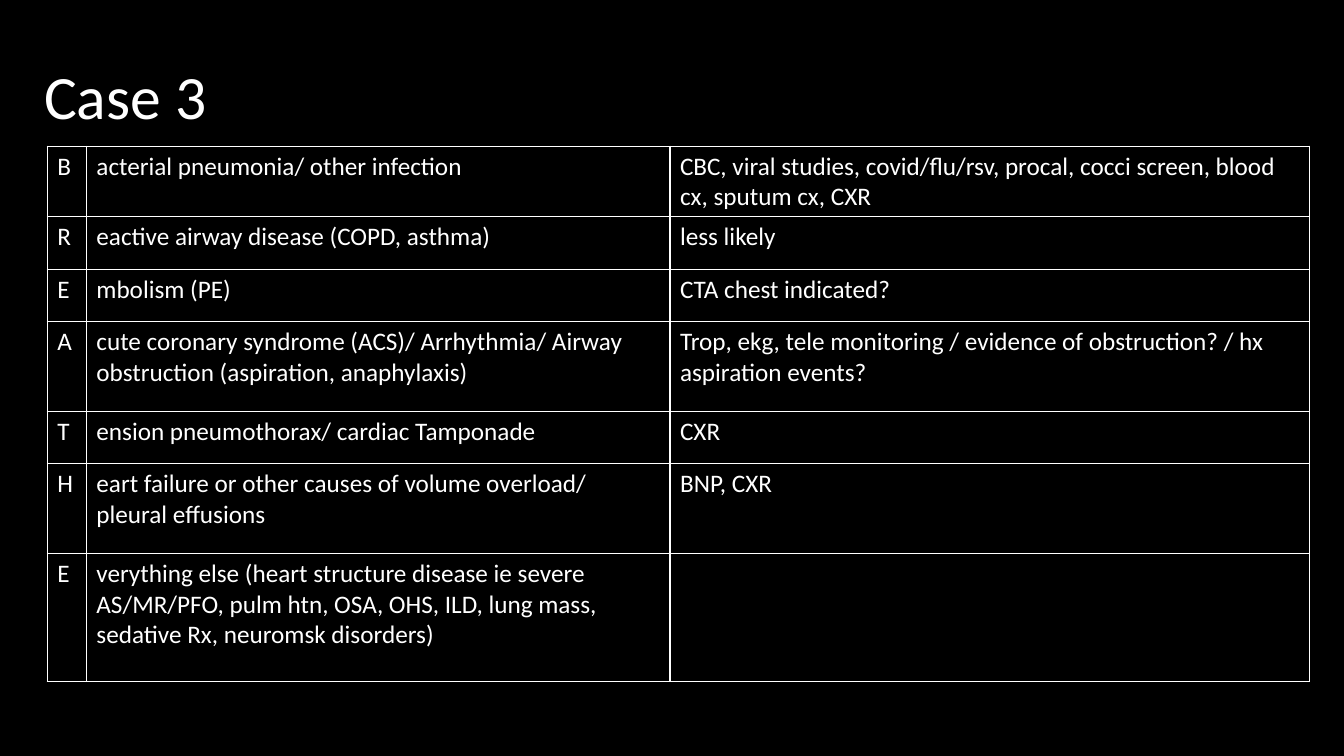
import pptx
import pptx.util
import pptx.dml.color
import pptx.enum.text
import pptx.oxml
import pptx.oxml.ns
from lxml import etree

Pt = pptx.util.Pt
FONT = "Calibri"
COLORS = {"back": "000000", "text": "FFFFFF", "line": "FFFFFF"}
TITLE = "Case 3"
ONE, TWO, THREE = 37.5, 64, 91.5  # row heights by lines of text
ROWS = [
    (ONE, "B", "acterial pneumonia/ other infection",
     "CBC, viral studies, covid/flu/rsv, procal, cocci screen, blood cx, sputum cx, CXR"),
    (ONE, "R", "eactive airway disease (COPD, asthma)", "less likely"),
    (ONE, "E", "mbolism (PE)", "CTA chest indicated?"),
    (TWO, "A", "cute coronary syndrome (ACS)/ Arrhythmia/ Airway obstruction (aspiration, anaphylaxis)",
     "Trop, ekg, tele monitoring / evidence of obstruction? / hx aspiration events?"),
    (ONE, "T", "ension pneumothorax/ cardiac Tamponade", "CXR"),
    (TWO, "H", "eart failure or other causes of volume overload/ pleural effusions", "BNP, CXR"),
    (THREE, "E", "verything else (heart structure disease ie severe AS/MR/PFO, pulm htn, OSA, OHS, "
     "ILD, lung mass, sedative Rx, neuromsk disorders)", ""),
]
WIDTHS = [27.9, 416.9, 457]
LEFT, TOP = 33.8, 104.4


def color(name):
    return pptx.dml.color.RGBColor.from_string(COLORS[name])


def write(para, text, size):
    run = para.add_run()
    run.text = text
    run.font.name = FONT
    run.font.size = Pt(size)
    run.font.color.rgb = color("text")


def border(cell):
    """Draw a thin line on all four sides; lines must precede the fill."""
    props = cell._tc.get_or_add_tcPr()
    for spot, side in enumerate(("lnL", "lnR", "lnT", "lnB")):
        line = etree.Element(pptx.oxml.ns.qn("a:" + side), w=str(Pt(1)))
        fill = etree.SubElement(line, pptx.oxml.ns.qn("a:solidFill"))
        etree.SubElement(fill, pptx.oxml.ns.qn("a:srgbClr"), val=COLORS["line"])
        props.insert(spot, line)


def add_title(slide):
    box = slide.shapes.add_textbox(Pt(24.5), Pt(18.7), Pt(828), Pt(104.4))
    frame = box.text_frame
    frame.word_wrap = True
    frame.vertical_anchor = pptx.enum.text.MSO_ANCHOR.MIDDLE
    para = frame.paragraphs[0]
    para.line_spacing = 0.9
    write(para, TITLE, 44)


def add_grid(slide):
    high = sum(row[0] for row in ROWS)
    table = slide.shapes.add_table(len(ROWS), len(WIDTHS), Pt(LEFT), Pt(TOP),
                                   Pt(sum(WIDTHS)), Pt(high)).table
    table.first_row = table.horz_banding = False
    for col, width in zip(table.columns, WIDTHS):
        col.width = Pt(width)
    for row, (height, *texts) in zip(table.rows, ROWS):
        row.height = Pt(height)
        for cell, text in zip(row.cells, texts):
            cell.fill.solid()
            cell.fill.fore_color.rgb = color("back")
            border(cell)
            para = cell.text_frame.paragraphs[0]
            if text:
                write(para, text, 18)
            else:
                para.font.size = Pt(18)


def main():
    deck = pptx.Presentation()
    deck.slide_width, deck.slide_height = Pt(960), Pt(540)
    slide = deck.slides.add_slide(deck.slide_layouts[6])
    slide.background.fill.solid()
    slide.background.fill.fore_color.rgb = color("back")
    add_title(slide)
    add_grid(slide)
    deck.save("out.pptx")


if __name__ == "__main__":
    main()
